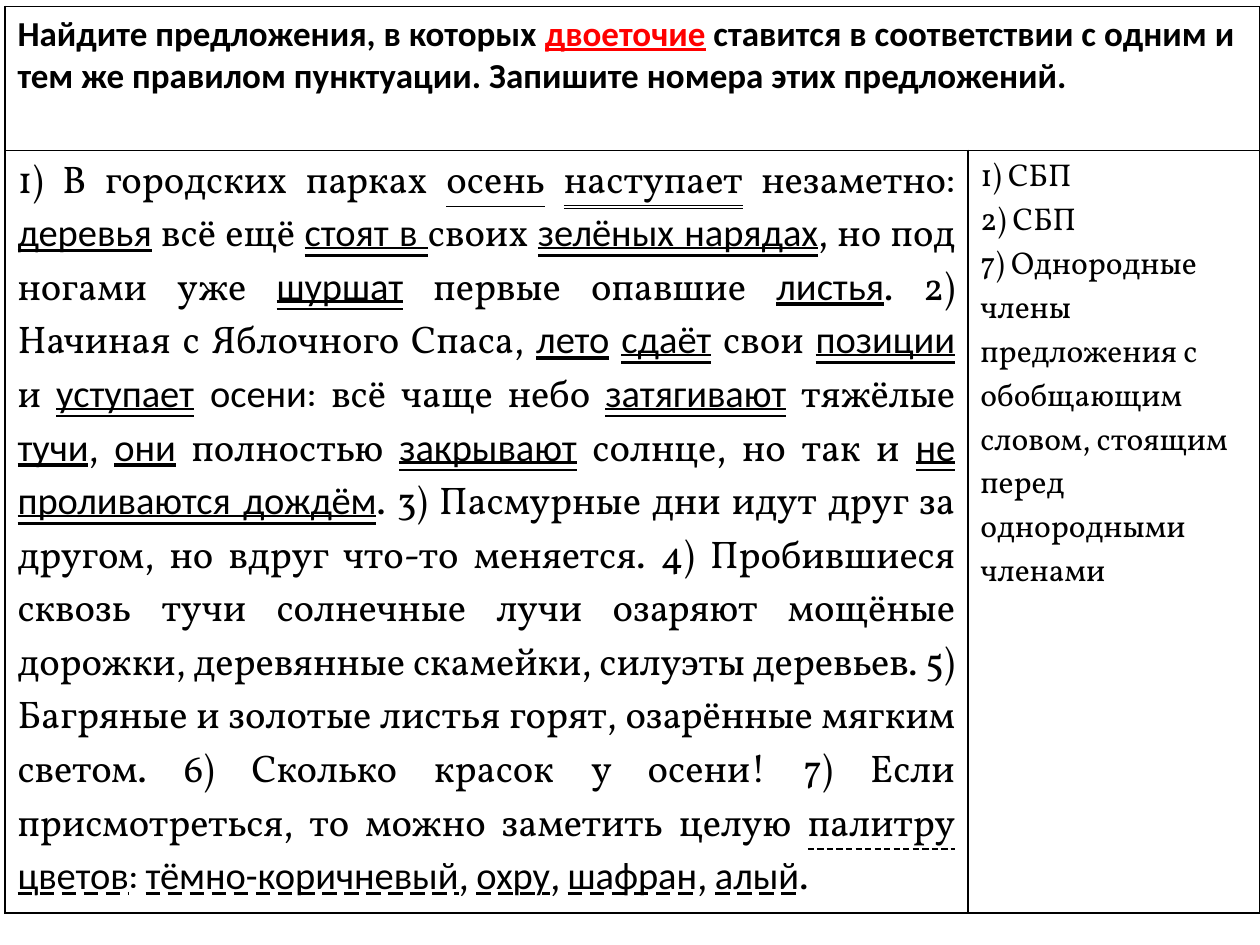
"""Build a slide with a punctuation task table: heading, sentences and answers."""
from lxml.etree import SubElement as Sub
from pptx import Presentation
from pptx.dml.color import RGBColor
from pptx.enum.text import MSO_TEXT_UNDERLINE_TYPE as Under, PP_ALIGN as Align
from pptx.oxml.ns import qn
from pptx.util import Cm, Pt

SANS, SERIF = "Calibri", "Vollkorn"
ONE, TWO, DASH = Under.SINGLE_LINE, Under.DOUBLE_LINE, Under.DASH_LINE
BLACK, RED = "000000", "FF0000"
COLS, ROWS = (19.41, 5.89), (2.9, 14.73)
LEFT, TOP = 0.1, 0.13

HEAD = [
    ("Найдите предложения, в которых ", {}),
    ("двоеточие", {"line": ONE, "color": RED}),
    (" ставится в соответствии с одним и тем же правилом пунктуации. "
     "Запишите номера этих предложений.", {}),
]
TASK = [
    ("1) В городских парках ",), ("осень", ONE, SERIF), (" ",),
    ("наступает", TWO, SERIF), (" незаметно: ",), ("деревья", ONE),
    (" всё ещё ",), ("стоят в ", TWO), ("своих ",), ("зелёных нарядах", TWO),
    (", но под ногами уже ",), ("шуршат", TWO), (" первые опавшие ",),
    ("листья", ONE), (". 2) Начиная с Яблочного Спаса, ",), ("лето", ONE),
    (" ",), ("сдаёт", TWO), (" свои ",), ("позиции", TWO), (" и ",),
    ("уступает", TWO), (" осени", None), (": всё чаще небо ",),
    ("затягивают", TWO), (" тяжёлые ",), ("тучи", ONE), (", ",), ("они", ONE),
    (" полностью ",), ("закрывают", TWO), (" солнце, но так и ",),
    ("не проливаются дождём", TWO),
    (". 3) Пасмурные дни идут друг за другом, но вдруг что-то меняется. "
     "4) Пробившиеся сквозь тучи солнечные лучи озаряют мощёные дорожки, "
     "деревянные скамейки, силуэты деревьев. 5) Багряные и золотые листья "
     "горят, озарённые мягким светом. 6) Сколько красок у осени! "
     "7) Если присмотреться, то можно заметить целую ",),
    ("палитру", DASH, SERIF), (" ",), ("цветов", DASH), (": ",),
    ("тёмно-коричневый", DASH), (", ",), ("охру", DASH), (", ",),
    ("шафран", DASH), (", ",), ("алый", DASH), (".",),
]
NOTES = [
    "1) СБП",
    "2) СБП",
    "7) Однородные члены предложения с обобщающим словом, стоящим перед "
    "однородными членами",
]


def rgb(code):
    return RGBColor.from_string(code)


def write(para, text, size=22, font=SERIF, bold=False, line=None, color=BLACK):
    run = para.add_run()
    run.text = text
    face = run.font
    face.size, face.name, face.bold = Pt(size), font, bold
    face.underline = line or False
    face.color.rgb = rgb(color)


def frame(cell):
    props = cell._tc.get_or_add_tcPr()
    for side in ("lnL", "lnR", "lnT", "lnB"):
        edge = Sub(props, qn(f"a:{side}"), w=str(Pt(1)))
        fill = Sub(edge, qn("a:solidFill"))
        Sub(fill, qn("a:srgbClr"), val=BLACK)
    cell.fill.background()


def main():
    deck = Presentation()
    deck.slide_width, deck.slide_height = Cm(25.4), Cm(19.05)
    slide = deck.slides.add_slide(deck.slide_layouts[6])
    grid = slide.shapes.add_table(
        len(ROWS), len(COLS), Cm(LEFT), Cm(TOP), Cm(sum(COLS)), Cm(sum(ROWS))
    ).table
    grid.first_row = grid.horz_banding = False
    for col, width in zip(grid.columns, COLS):
        col.width = Cm(width)
    for row, height in zip(grid.rows, ROWS):
        row.height = Cm(height)
        for cell in row.cells:
            frame(cell)
    grid.cell(0, 0).merge(grid.cell(0, 1))

    para = grid.cell(0, 0).text_frame.paragraphs[0]
    for text, look in HEAD:
        write(para, text, size=20, font=SANS, bold=True, **look)

    para = grid.cell(1, 0).text_frame.paragraphs[0]
    para.alignment = Align.JUSTIFY
    for text, *look in TASK:
        line = look[0] if look else None
        font = look[1] if len(look) > 1 else SANS if look else SERIF
        write(para, text, line=line, font=font)

    body = grid.cell(1, 1).text_frame
    for i, text in enumerate(NOTES):
        para = body.add_paragraph() if i else body.paragraphs[0]
        write(para, text, size=18)

    deck.save("out.pptx")


if __name__ == "__main__":
    main()
